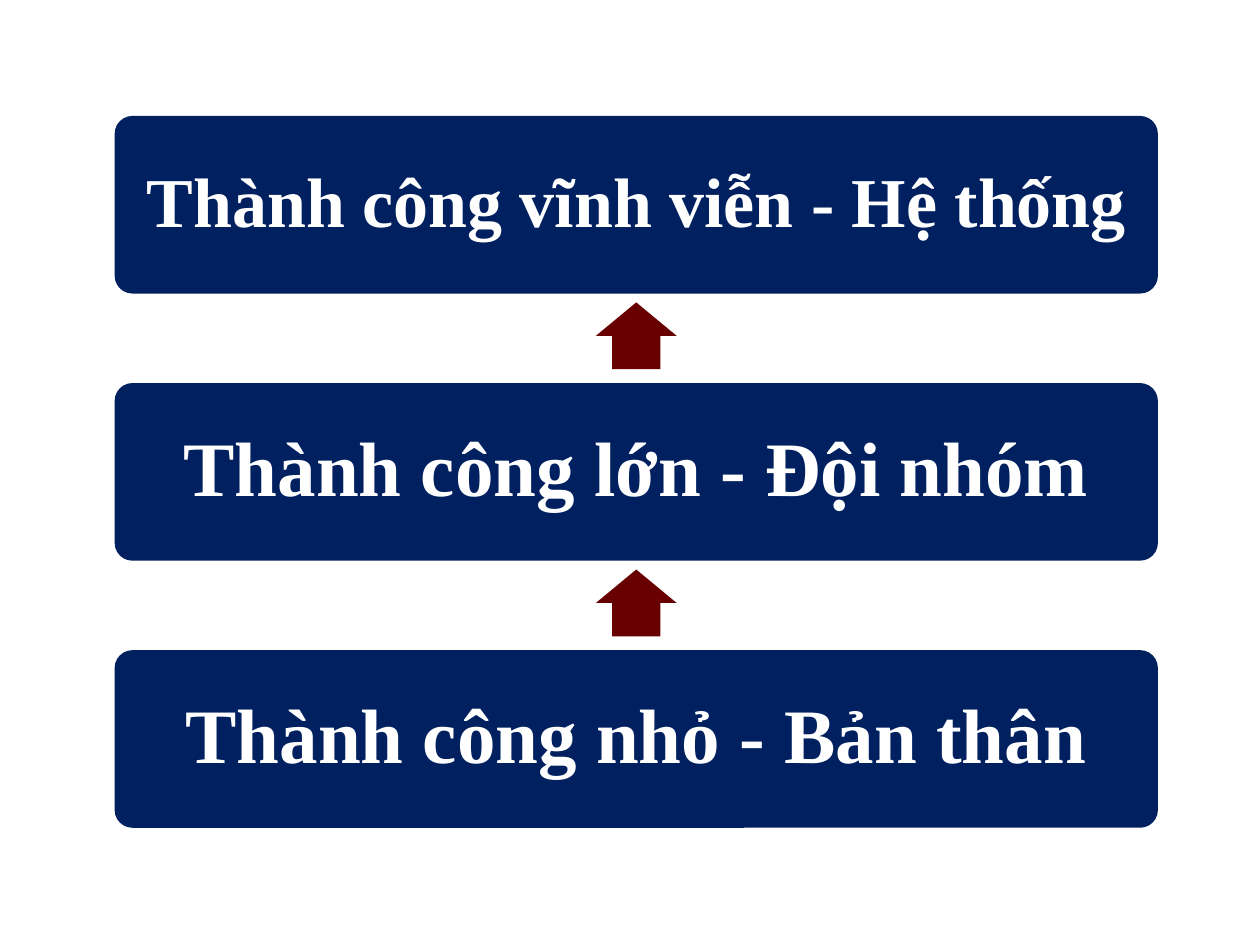
from pptx import Presentation
from pptx.dml.color import RGBColor
from pptx.enum.shapes import MSO_SHAPE
from pptx.enum.text import MSO_ANCHOR, PP_ALIGN
from pptx.util import Inches, Pt

NAVY = RGBColor(0x00, 0x20, 0x60)
MAROON = RGBColor(0x68, 0x00, 0x00)
WHITE = RGBColor(0xFF, 0xFF, 0xFF)

LEVELS = [
    ("Thành công vĩnh viễn - Hệ thống", 40),
    ("Thành công lớn - Đội nhóm", 44),
    ("Thành công nhỏ - Bản thân", 44),
]
LEFT, TOP, WIDTH, HEIGHT, STEP = 0.91, 0.92, 8.28, 1.41, 2.12
ARROW_LENGTH, ARROW_BREADTH = 0.53, 0.64


def write_text(frame, text, size, color=WHITE, font="Times New Roman", inset=0.21):
    frame.word_wrap = True
    frame.vertical_anchor = MSO_ANCHOR.MIDDLE
    frame.margin_left = frame.margin_right = Inches(inset)
    frame.margin_top = frame.margin_bottom = Inches(inset)
    para = frame.paragraphs[0]
    para.alignment = PP_ALIGN.CENTER
    para.line_spacing = 0.9
    span = para.add_run()
    span.text = text
    span.font.name = font
    span.font.size = Pt(size)
    span.font.bold = True
    span.font.color.rgb = color


class SlideBuilder:
    def __init__(self, page, box_color=NAVY, arrow_color=MAROON):
        self.page = page
        self.box_color = box_color
        self.arrow_color = arrow_color

    def add_shape(self, kind, left, top, width, height, color, adjustments):
        shape = self.page.shapes.add_shape(
            kind, Inches(left), Inches(top), Inches(width), Inches(height)
        )
        shape.shadow.inherit = False
        shape.fill.solid()
        shape.fill.fore_color.rgb = color
        shape.line.fill.background()
        for index, value in enumerate(adjustments):
            shape.adjustments[index] = value
        return shape

    def add_level(self, top, text, size):
        box = self.add_shape(
            MSO_SHAPE.ROUNDED_RECTANGLE, LEFT, top, WIDTH, HEIGHT, self.box_color, [0.1]
        )
        write_text(box.text_frame, text, size)

    def add_up_arrow(self, center_x, center_y):
        arrow = self.add_shape(
            MSO_SHAPE.RIGHT_ARROW,
            center_x - ARROW_LENGTH / 2,
            center_y - ARROW_BREADTH / 2,
            ARROW_LENGTH,
            ARROW_BREADTH,
            self.arrow_color,
            [0.6, 0.5],
        )
        arrow.rotation = 270


def main():
    deck = Presentation()
    deck.slide_width, deck.slide_height = Inches(10), Inches(7.5)
    builder = SlideBuilder(deck.slides.add_slide(deck.slide_layouts[6]))
    for index, (text, size) in enumerate(LEVELS):
        top = TOP + index * STEP
        if index:
            builder.add_up_arrow(LEFT + WIDTH / 2, top - (STEP - HEIGHT) / 2 - 0.02)
        builder.add_level(top, text, size)
    deck.save("out.pptx")


if __name__ == "__main__":
    main()
